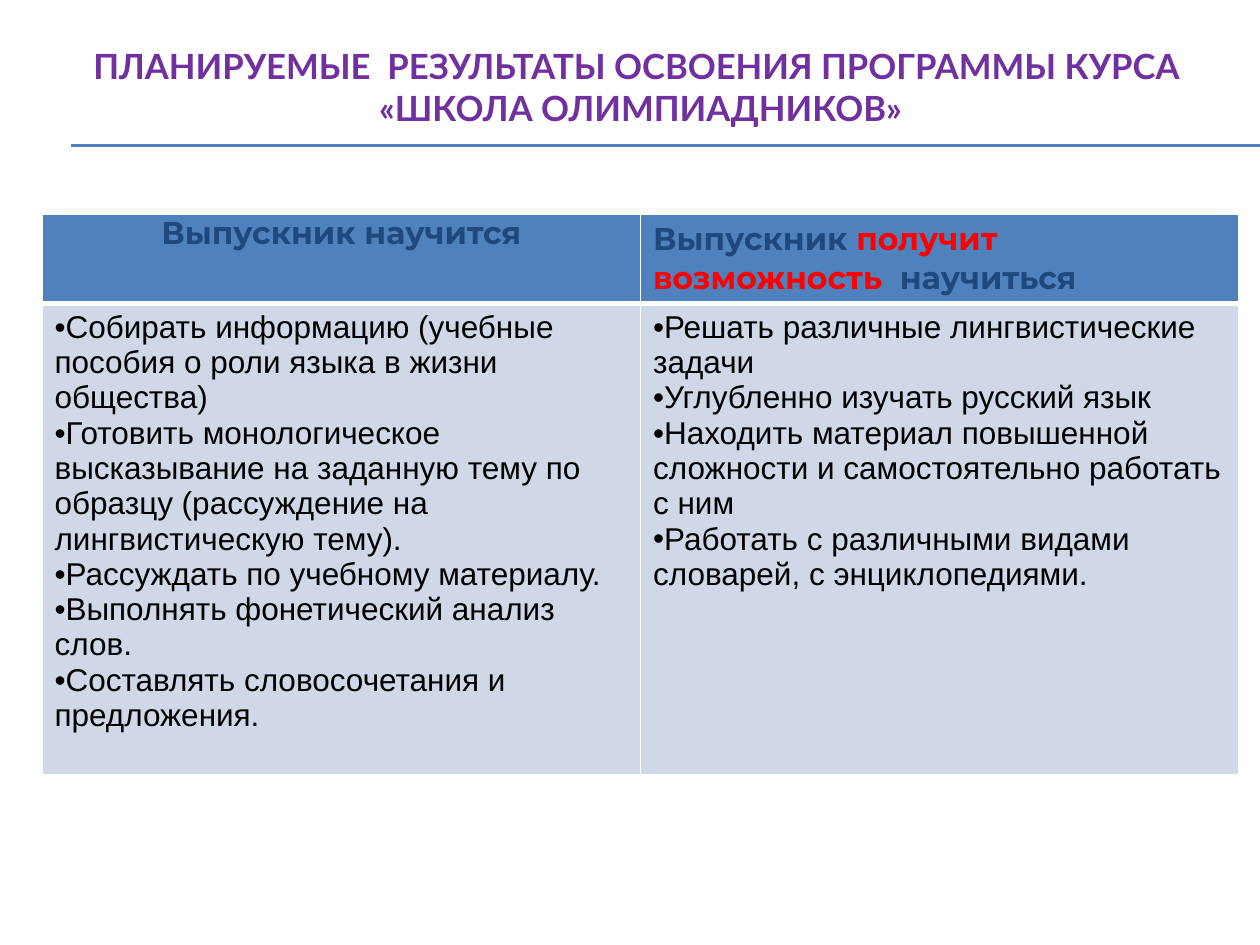
from lxml.etree import SubElement
from pptx import Presentation
from pptx.dml.color import RGBColor
from pptx.enum.shapes import MSO_CONNECTOR
from pptx.enum.text import MSO_ANCHOR, PP_ALIGN
from pptx.oxml.ns import qn
from pptx.util import Emu, Pt

PURPLE, BLUE, NAVY, RED = "7030A0", "4F81BD", "1F497D", "FF0000"
PALE, WHITE, BLACK = "D0D8E8", "FFFFFF", "000000"

HEADERS = [
    [("Выпускник научится", NAVY)],
    [("Выпускник ", NAVY), ("получит возможность", RED), ("  научиться", NAVY)],
]
SKILLS = [
    [
        "Собирать информацию (учебные пособия о роли языка в жизни общества)",
        "Готовить монологическое высказывание на заданную тему по образцу "
        "(рассуждение на лингвистическую тему).",
        "Рассуждать по учебному материалу.",
        "Выполнять фонетический анализ слов.",
        "Составлять словосочетания и предложения.",
    ],
    [
        "Решать различные лингвистические задачи",
        "Углубленно изучать русский язык",
        "Находить материал повышенной сложности и самостоятельно работать с ним",
        "Работать с различными видами словарей, с энциклопедиями.",
    ],
]


def px(length):
    """Turn pixels into EMU."""
    return Emu(round(length * 914400 / 126))


def color(value):
    """Turn a hex string into a colour."""
    return RGBColor.from_string(value)


def set_font(font, name, size, bold, value):
    """Format one font."""
    font.name, font.size, font.bold = name, Pt(size), bold
    font.color.rgb = color(value)


def add_title(page, left, top, width, height):
    """Place the heading in the title placeholder."""
    title = page.shapes.title
    title.left, title.top, title.width, title.height = map(px, (left, top, width, height))
    frame = title.text_frame
    frame.word_wrap = True
    frame.vertical_anchor = MSO_ANCHOR.MIDDLE
    frame.margin_top, frame.margin_bottom = 0, px(69)
    para = frame.paragraphs[0]
    para.text = "ПЛАНИРУЕМЫЕ  РЕЗУЛЬТАТЫ ОСВОЕНИЯ ПРОГРАММЫ КУРСА \v«ШКОЛА ОЛИМПИАДНИКОВ»"
    para.alignment = PP_ALIGN.CENTER
    set_font(para.font, "Lato", 19.8, True, PURPLE)


def add_rule(page, left, top, width):
    """Draw a thin horizontal line."""
    rule = page.shapes.add_connector(
        MSO_CONNECTOR.STRAIGHT, px(left), px(top), px(left + width), px(top))
    rule.line.color.rgb = color(BLUE)
    rule.line.width = Pt(0.75)
    SubElement(rule._element.spPr, qn("a:effectLst"))


def style_cell(cell, fill, bottom_width):
    """Give a cell white borders and a fill."""
    properties = cell._tc.get_or_add_tcPr()
    for side in "LRTB":
        width = bottom_width if side == "B" else 1
        border = SubElement(properties, qn(f"a:ln{side}"), w=str(Pt(width)))
        SubElement(SubElement(border, qn("a:solidFill")), qn("a:srgbClr"), val=WHITE)
    cell.fill.solid()
    cell.fill.fore_color.rgb = color(fill)


def fill_header(cell, pieces):
    """Write a header made of coloured pieces."""
    style_cell(cell, BLUE, 3)
    para = cell.text_frame.paragraphs[0]
    for text, value in pieces:
        span = para.add_run()
        span.text = text
        set_font(span.font, "Montserrat", 18, True, value)


def fill_list(cell, items):
    """Write a bulleted list."""
    style_cell(cell, PALE, 1)
    cell.text = "\n".join(items)
    for para in cell.text_frame.paragraphs:
        properties = para._p.get_or_add_pPr()
        properties.set("marL", "0")
        properties.set("indent", "0")
        SubElement(properties, qn("a:buFont"), typeface="Arial")
        SubElement(properties, qn("a:buChar"), char="•")
        set_font(para.font, "Arial", 18, False, BLACK)


def add_results(page, left, top, width, header_height, list_height):
    """Build the table of expected results."""
    table = page.shapes.add_table(
        2, len(HEADERS), px(left), px(top), px(width), px(header_height + list_height)).table
    table.rows[0].height, table.rows[1].height = px(header_height), px(list_height)
    for index, (pieces, items) in enumerate(zip(HEADERS, SKILLS)):
        fill_header(table.cell(0, index), pieces)
        fill_list(table.cell(1, index), items)
    first = table.cell(0, 0)
    first.margin_left = first.margin_right = px(9)
    first.margin_top = first.margin_bottom = 0
    first.text_frame.paragraphs[0].alignment = PP_ALIGN.CENTER


def main():
    """Build and save the deck."""
    deck = Presentation()
    deck.slide_width, deck.slide_height = px(1260), px(945)
    page = deck.slides.add_slide(deck.slide_layouts[5])
    for top in (145, 146):
        add_rule(page, 71, top, 1189)
    add_title(page, 42, 63, 1197, 116)
    add_results(page, 42, 214, 1197, 89, 471)
    deck.save("out.pptx")


if __name__ == "__main__":
    main()
